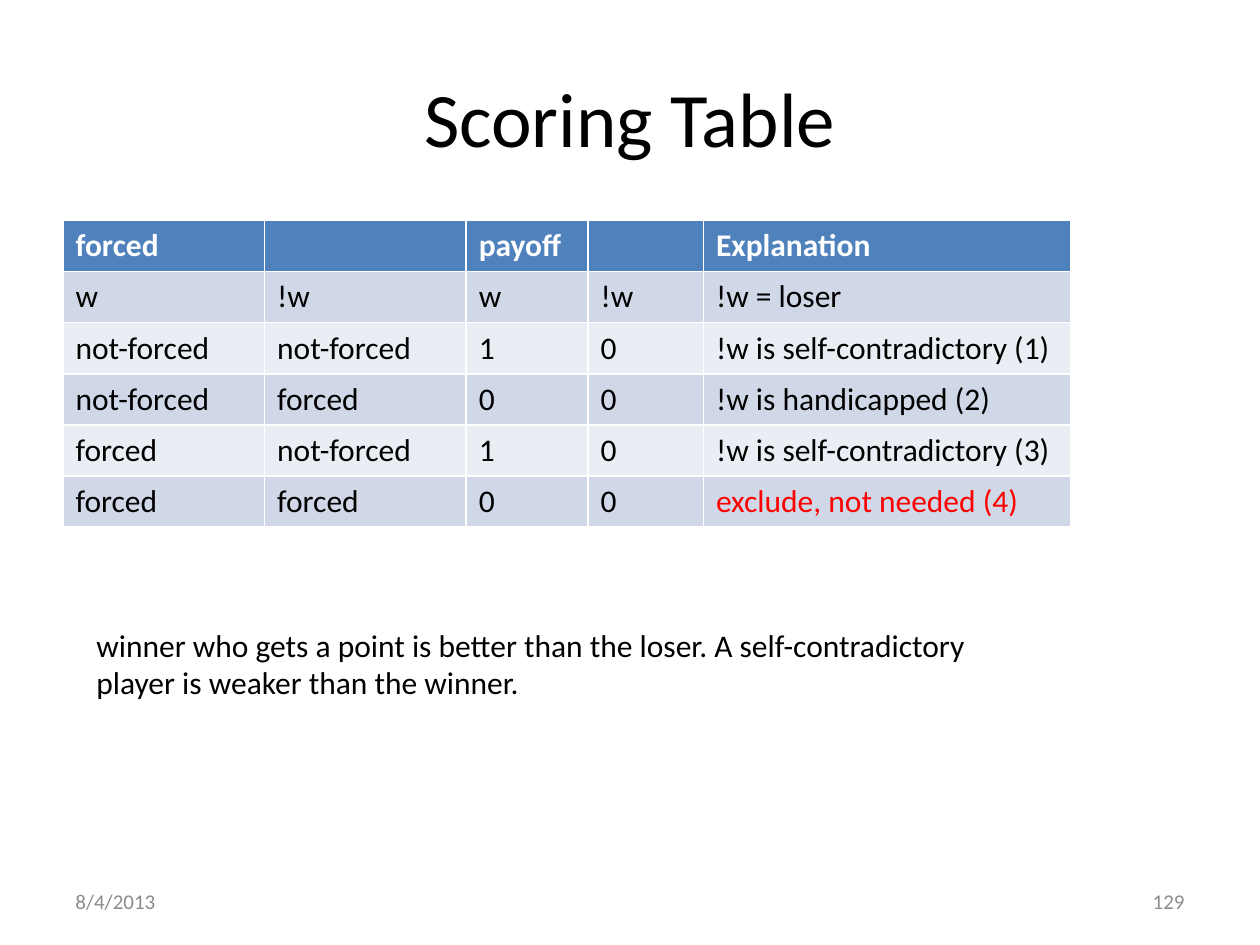
import dataclasses

import pptx
import pptx.dml.color
import pptx.enum.text
import pptx.util

Pt = pptx.util.Pt
Color = pptx.dml.color.RGBColor.from_string
Align = pptx.enum.text.PP_ALIGN
Anchor = pptx.enum.text.MSO_ANCHOR


@dataclasses.dataclass(frozen=True)
class Theme:
    font: str = "Calibri"
    title: int = 44
    body: int = 18
    small: int = 12
    ink: str = "000000"
    paper: str = "FFFFFF"
    alert: str = "FF0000"
    muted: str = "8C8C8C"
    head: str = "4F81BD"
    bands: tuple = ("D0D8E8", "E9EDF4")


THEME = Theme()
WIDTHS = (115.2, 115.2, 69.6, 66, 210)
ROWS = (
    ("forced", "", "payoff", "", "Explanation"),
    ("w", "!w", "w", "!w", "!w = loser"),
    ("not-forced", "not-forced", "1", "0", "!w is self-contradictory (1)"),
    ("not-forced", "forced", "0", "0", "!w is handicapped (2)"),
    ("forced", "not-forced", "1", "0", "!w is self-contradictory (3)"),
    ("forced", "forced", "0", "0", "exclude, not needed (4)"),
)
NOTE = (
    "winner who gets a point is better than the loser. A self-contradictory\n"
    "player is weaker than the winner."
)


def style(frame, size, color, align=Align.LEFT, bold=False):
    for para in frame.paragraphs:
        para.alignment = align
        for run in para.runs:
            run.font.name = THEME.font
            run.font.size = Pt(size)
            run.font.bold = bold
            run.font.color.rgb = Color(color)


def add_text(slide, box, text, size, color, align=Align.LEFT,
             anchor=Anchor.MIDDLE, wrap=True):
    frame = slide.shapes.add_textbox(*map(Pt, box)).text_frame
    frame.word_wrap = wrap
    frame.vertical_anchor = anchor
    frame.text = text
    style(frame, size, color, align)


def add_scores(slide, box):
    table = slide.shapes.add_table(len(ROWS), len(WIDTHS), *map(Pt, box)).table
    for column, width in zip(table.columns, WIDTHS):
        column.width = Pt(width)
    for i, row in enumerate(ROWS):
        fill = THEME.bands[(i - 1) % 2] if i else THEME.head
        color = THEME.ink if i else THEME.paper
        for j, text in enumerate(row):
            cell = table.cell(i, j)
            cell.fill.solid()
            cell.fill.fore_color.rgb = Color(fill)
            cell.text_frame.text = text
            style(cell.text_frame, THEME.body, color, bold=i == 0)
    last = table.cell(len(ROWS) - 1, len(WIDTHS) - 1)
    style(last.text_frame, THEME.body, THEME.alert)


def add_footer(slide, box):
    left, top, width, height = box
    part = 168
    add_text(slide, (left, top, part, height), "8/4/2013",
             THEME.small, THEME.muted)
    add_text(slide, (left + width - part, top, part, height), "129",
             THEME.small, THEME.muted, Align.RIGHT)


def main():
    deck = pptx.Presentation()
    deck.slide_width, deck.slide_height = Pt(720), Pt(540)
    slide = deck.slides.add_slide(deck.slide_layouts[6])
    add_text(slide, (36, 21.6, 648, 90), "Scoring Table",
             THEME.title, THEME.ink, Align.CENTER)
    add_scores(slide, (36, 126, sum(WIDTHS), 175.2))
    add_text(slide, (48, 354, 525, 52), NOTE, THEME.body, THEME.ink,
             anchor=Anchor.TOP, wrap=False)
    add_footer(slide, (36, 500.5, 648, 28.75))
    deck.save("out.pptx")


if __name__ == "__main__":
    main()
